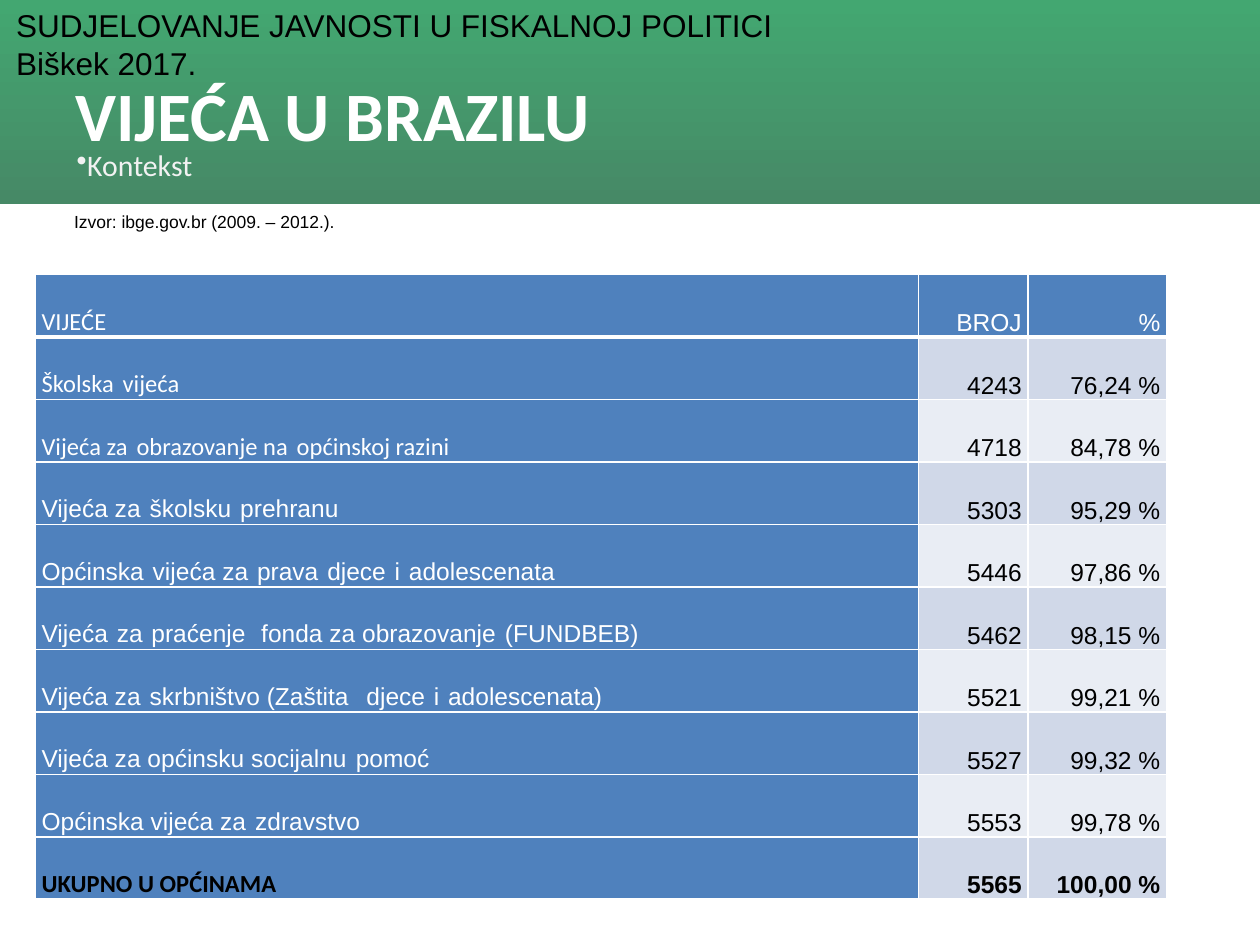
from dataclasses import dataclass

from lxml.etree import SubElement
from pptx import Presentation
from pptx.dml.color import RGBColor
from pptx.enum.shapes import MSO_SHAPE
from pptx.enum.text import MSO_ANCHOR, PP_ALIGN
from pptx.oxml.ns import qn
from pptx.util import Inches, Pt


@dataclass(frozen=True)
class Theme:
    """Colours, fonts and type sizes of the slide."""
    top: str = "43A771"
    base: str = "468966"
    blue: str = "4F81BD"
    bands: tuple = ("D0D8E8", "E9EDF4")
    white: str = "FFFFFF"
    pale: str = "F2F2F2"
    black: str = "000000"
    sans: str = "Arial"
    head: str = "Calibri"
    title: float = 39.6
    large: float = 18
    sub: float = 17
    cell: float = 14
    small: float = 10


THEME = Theme()
ROWS = [
    ("VIJEĆE", "BROJ", "%"),
    ("Školska|vijeća", "4243", "76,24\u00a0%"),
    ("Vijeća za|obrazovanje na|općinskoj razini", "4718", "84,78\u00a0%"),
    ("Vijeća za|školsku|prehranu", "5303", "95,29\u00a0%"),
    ("Općinska|vijeća za|prava|djece|i|adolescenata", "5446", "97,86\u00a0%"),
    ("Vijeća|za|praćenje| fonda za obrazovanje|(FUNDBEB)", "5462", "98,15\u00a0%"),
    ("Vijeća za|skrbništvo (Zaštita||djece|i|adolescenata)", "5521", "99,21\u00a0%"),
    ("Vijeća za općinsku socijalnu|pomoć", "5527", "99,32\u00a0%"),
    ("Općinska vijeća za|zdravstvo", "5553", "99,78\u00a0%"),
    ("UKUPNO U OPĆINAMA", "5565", "100,00\u00a0%"),
]
HEAD_ROWS = (0, 1, 2, len(ROWS) - 1)


def add_run(para, text, size, color, font=THEME.sans, bold=False):
    """Add one styled run to a paragraph."""
    run = para.add_run()
    run.text = text
    run.font.size = Pt(size)
    run.font.name = font
    run.font.bold = bold
    run.font.color.rgb = RGBColor.from_string(color)


def add_box(slide, box, anchor=MSO_ANCHOR.MIDDLE):
    """Add a wrapping text box and return its first paragraph."""
    frame = slide.shapes.add_textbox(*map(Inches, box)).text_frame
    frame.word_wrap = True
    frame.vertical_anchor = anchor
    return frame.paragraphs[0]


def add_banner(slide, box):
    """Draw the green banner with the event, title and subtitle."""
    left, top, width, height = box
    band = slide.shapes.add_shape(MSO_SHAPE.RECTANGLE, *map(Inches, box))
    band.shadow.inherit = False
    band.line.fill.background()
    band.fill.gradient()
    band.fill.gradient_angle = 270
    for stop, color in zip(band.fill.gradient_stops, (THEME.top, THEME.base)):
        stop.color.rgb = RGBColor.from_string(color)

    event = add_box(slide, (left + 0.03, top, width - 0.22, 0.4), MSO_ANCHOR.TOP)
    add_run(event, "SUDJELOVANJE JAVNOSTI U FISKALNOJ POLITICI", THEME.large, THEME.black)
    event.add_line_break()
    add_run(event, "Biškek 2017.", THEME.large, THEME.black)

    sub = add_box(slide, (left + 0.51, top + height - 0.55, width - 1.02, 0.47))
    SubElement(sub._p.get_or_add_pPr(), qn("a:buChar"), char="•")
    add_run(sub, "Kontekst", THEME.sub, THEME.pale, THEME.head)

    title = add_box(slide, (left + 0.5, top + 0.52, width - 1, 0.77))
    add_run(title, "VIJEĆA U BRAZILU", THEME.title, THEME.white, THEME.head, True)


def add_source(slide, box):
    """Write the indented source line."""
    para = add_box(slide, box)
    para.alignment = PP_ALIGN.JUSTIFY
    para._p.get_or_add_pPr().set("indent", str(Inches(0.49)))
    add_run(para, "Izvor: ibge.gov.br (2009.\u00a0–\u00a02012.).", THEME.small, THEME.black)


def style_cell(cell, color, first):
    """Set the borders, fill, insets and anchor of a cell."""
    props = cell._tc.get_or_add_tcPr()
    for side in "LRTB":
        width = Pt(3 if first and side == "B" else 1)
        line = SubElement(props, qn(f"a:ln{side}"), w=str(width))
        SubElement(SubElement(line, qn("a:solidFill")), qn("a:srgbClr"), val=THEME.white)
    cell.fill.solid()
    cell.fill.fore_color.rgb = RGBColor.from_string(color)
    cell.margin_left = cell.margin_right = Inches(0.05)
    cell.margin_top = cell.margin_bottom = 0
    cell.vertical_anchor = MSO_ANCHOR.BOTTOM


def fill_cell(cell, text, row, col):
    """Write a cell, with a wide space at each bar in the text."""
    first, last = row == 0, row == len(ROWS) - 1
    blue = first or col == 0
    style_cell(cell, THEME.blue if blue else THEME.bands[(row - 1) % 2], first)
    color = THEME.white if blue and not last else THEME.black
    font = THEME.head if col == 0 and row in HEAD_ROWS else THEME.sans
    para = cell.text_frame.paragraphs[0]
    para.line_spacing = 1.15
    para.alignment = PP_ALIGN.RIGHT if col else PP_ALIGN.LEFT
    for spot, part in enumerate(text.split("|")):
        if spot:
            add_run(para, " ", THEME.large, color)
        if part:
            add_run(para, part, THEME.cell, color, font, last)


def add_grid(slide, box):
    """Add the table of councils with equal rows."""
    widths = (7.01, 0.87, 1.1)
    frame = slide.shapes.add_table(len(ROWS), len(widths), *map(Inches, box))
    table = frame.table
    for column, width in zip(table.columns, widths):
        column.width = Inches(width)
    for row, texts in enumerate(ROWS):
        table.rows[row].height = Inches(box[3] / len(ROWS))
        for col, text in enumerate(texts):
            fill_cell(table.cell(row, col), text, row, col)


def main():
    """Build and save the slide."""
    deck = Presentation()
    deck.slide_width, deck.slide_height = Inches(10), Inches(7.5)
    slide = deck.slides.add_slide(deck.slide_layouts[6])
    add_banner(slide, (0, 0, 10, 1.62))
    add_source(slide, (0, 1.62, 10, 0.27))
    add_grid(slide, (0.28, 2.18, 8.98, 4.96))
    deck.save("out.pptx")


if __name__ == "__main__":
    main()
